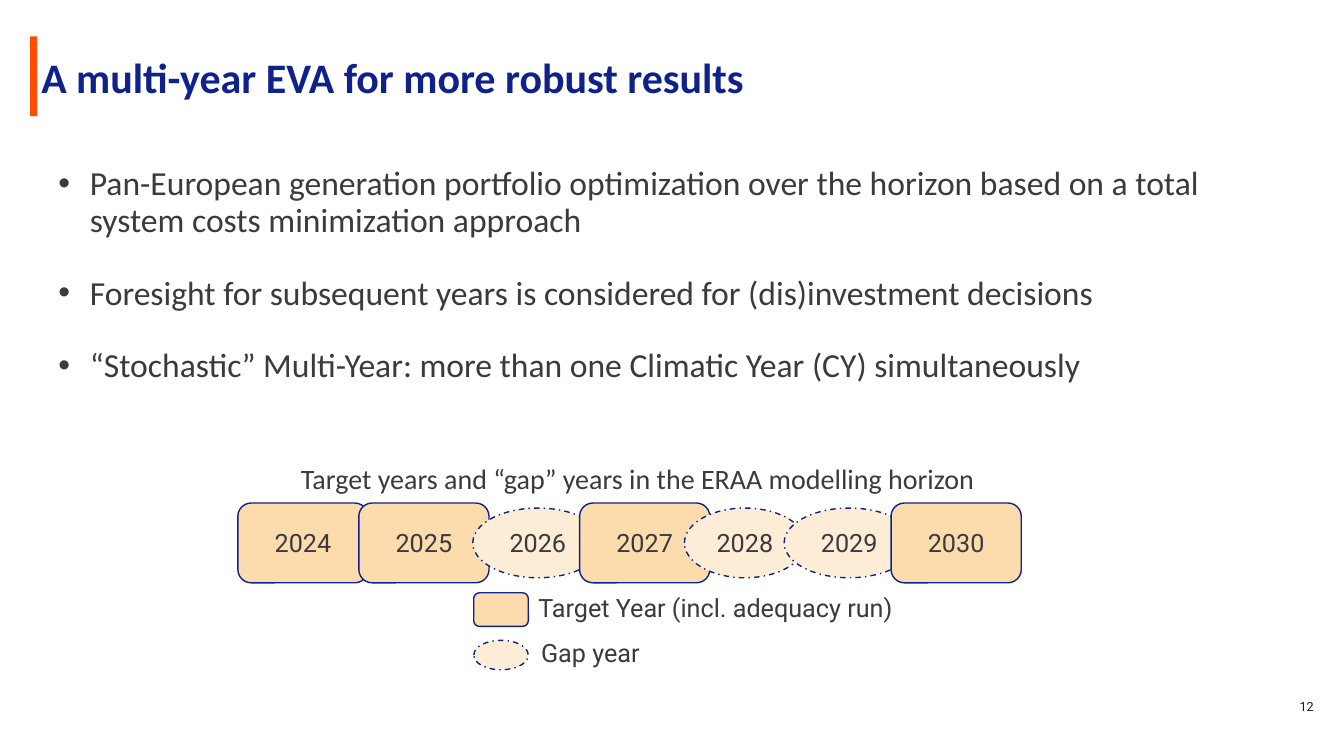
from lxml import etree
from pptx import Presentation
from pptx.dml.color import RGBColor
from pptx.enum.dml import MSO_LINE
from pptx.enum.shapes import MSO_SHAPE
from pptx.enum.text import MSO_ANCHOR, MSO_AUTO_SIZE, PP_ALIGN
from pptx.oxml.ns import qn
from pptx.util import Pt

LEFT, CENTER, RIGHT = PP_ALIGN.LEFT, PP_ALIGN.CENTER, PP_ALIGN.RIGHT
TOP, MIDDLE = MSO_ANCHOR.TOP, MSO_ANCHOR.MIDDLE
RECT, ROUNDED, OVAL = MSO_SHAPE.RECTANGLE, MSO_SHAPE.ROUNDED_RECTANGLE, MSO_SHAPE.OVAL
DASH_DOT, NO_AUTOFIT = MSO_LINE.DASH_DOT, MSO_AUTO_SIZE.NONE
TITLE_ONLY = 5

NAVY, ORANGE, INK, BLACK = "0F218B", "FF4D00", "3A3A3F", "1D1D20"
TARGET_FILL, GAP_FILL = "FCDBAD", "FDEDD6"

TITLE_FONT = dict(name="Calibri", size=Pt(30), bold=True)
CAPTION_FONT = dict(name="Calibri", size=Pt(20))
BULLET_FONT = dict(name="Calibri", size=Pt(24))
YEAR_FONT = dict(name="Roboto", size=Pt(18))
NUMBER_FONT = dict(name="Roboto", size=Pt(9))

BULLETS = [
    "Pan-European generation portfolio optimization over the horizon based on a total "
    "system costs minimization approach",
    "Foresight for subsequent years is considered for (dis)investment decisions",
    "“Stochastic” Multi-Year: more than one Climatic Year (CY) simultaneously",
]
# Year, offset from the left of the timeline, width, gap year or not
YEARS = [
    ("2024", 0, 93, False),
    ("2025", 86.4, 93, False),
    ("2026", 167.8, 93, True),
    ("2027", 244.1, 93, False),
    ("2028", 319, 86.4, True),
    ("2029", 390.2, 93, True),
    ("2030", 466.6, 93, False),
]


def rgb(hex_colour):
    return RGBColor.from_string(hex_colour)


def set_format(target, values):
    for attribute, value in values.items():
        setattr(target, attribute, value)


def write(paragraph, text, font, colour=INK, **layout):
    paragraph.text = text
    set_format(paragraph, layout)
    set_format(paragraph.runs[0].font, font)
    paragraph.runs[0].font.color.rgb = rgb(colour)


def add_text_frame(shapes, box, anchor=TOP):
    frame = shapes.add_textbox(*map(Pt, box)).text_frame
    set_format(frame, dict(word_wrap=True, vertical_anchor=anchor))
    return frame


def add_marker(shapes, box, is_gap):
    """Rounded box for a target year, dashed oval for a gap year."""
    marker = shapes.add_shape(OVAL if is_gap else ROUNDED, *map(Pt, box))
    marker.shadow.inherit = False
    marker.fill.solid()
    marker.fill.fore_color.rgb = rgb(GAP_FILL if is_gap else TARGET_FILL)
    marker.line.color.rgb = rgb(NAVY)
    marker.line.width = Pt(1)
    if is_gap:
        marker.line.dash_style = DASH_DOT
    return marker


def add_header(slide, left, top, width, height):
    # Accent bar
    bar = slide.shapes.add_shape(RECT, Pt(left), Pt(top), Pt(5), Pt(height))
    bar.shadow.inherit = False
    bar.fill.solid()
    bar.fill.fore_color.rgb = rgb(ORANGE)
    bar.line.fill.background()

    # Title
    title = slide.shapes.title
    set_format(title, dict(left=Pt(left + 0.7), top=Pt(top + 11.5),
                           width=Pt(width), height=Pt(51)))
    set_format(title.text_frame, dict(vertical_anchor=TOP, word_wrap=True,
                                      auto_size=NO_AUTOFIT))
    write(title.text_frame.paragraphs[0], "A multi-year EVA for more robust results",
          TITLE_FONT, NAVY, alignment=LEFT, line_spacing=Pt(32))


def add_bullets(slide, left, top, width, height):
    frame = add_text_frame(slide.shapes, (left, top, width, height))
    for index, text in enumerate(BULLETS):
        paragraph = frame.add_paragraph() if index else frame.paragraphs[0]
        properties = paragraph._p.get_or_add_pPr()
        properties.set("marL", str(Pt(22.5)))
        properties.set("indent", str(-Pt(22.5)))
        etree.SubElement(properties, qn("a:buFont")).set("typeface", "Arial")
        etree.SubElement(properties, qn("a:buChar")).set("char", "•")
        write(paragraph, text, BULLET_FONT, line_spacing=Pt(26))
        if index:
            paragraph.space_before = Pt(26)


def add_timeline(slide, left, top, height):
    # Caption above the years
    caption = add_text_frame(slide.shapes, (left + 38, top - 35.3, 780, 34))
    write(caption.paragraphs[0], "Target years and “gap” years in the ERAA modelling horizon",
          CAPTION_FONT, line_spacing=Pt(26))

    # Row of years
    row = slide.shapes.add_group_shape().shapes
    for year, offset, width, is_gap in YEARS:
        inset = 3.6 if is_gap else 0
        box = (left + offset, top + inset, width, height - 2 * inset)
        frame = add_marker(row, box, is_gap).text_frame
        frame.vertical_anchor = MIDDLE
        write(frame.paragraphs[0], year, YEAR_FONT, alignment=CENTER)


def add_legend(slide, left, top):
    legend = slide.shapes.add_group_shape().shapes
    entries = [
        ("Target Year (incl. adequacy run)", False, 0, 24, 39, -3.6),
        ("Gap year", True, 34, 21, 41, -5.6),
    ]
    for label, is_gap, offset, height, label_left, label_shift in entries:
        y = top + offset
        add_marker(legend, (left, y, 39, height), is_gap)
        frame = add_text_frame(legend, (left + label_left, y + label_shift, 276, 29))
        write(frame.paragraphs[0], label, YEAR_FONT)


def add_slide_number(slide, left, top, width, height):
    frame = add_text_frame(slide.shapes, (left, top, width, height), MIDDLE)
    write(frame.paragraphs[0], "12", NUMBER_FONT, BLACK, alignment=RIGHT, line_spacing=Pt(9))


def main():
    deck = Presentation()
    deck.slide_width, deck.slide_height = Pt(960), Pt(540)
    slide = deck.slides.add_slide(deck.slide_layouts[TITLE_ONLY])
    add_slide_number(slide, 486, 491, 459.4, 29)
    add_header(slide, 21.6, 26, 915, 57)
    add_timeline(slide, 169.9, 359.3, 57)
    add_legend(slide, 338.4, 423.4)
    add_bullets(slide, 34.6, 115.2, 890.6, 165)
    deck.save("out.pptx")


if __name__ == "__main__":
    main()
